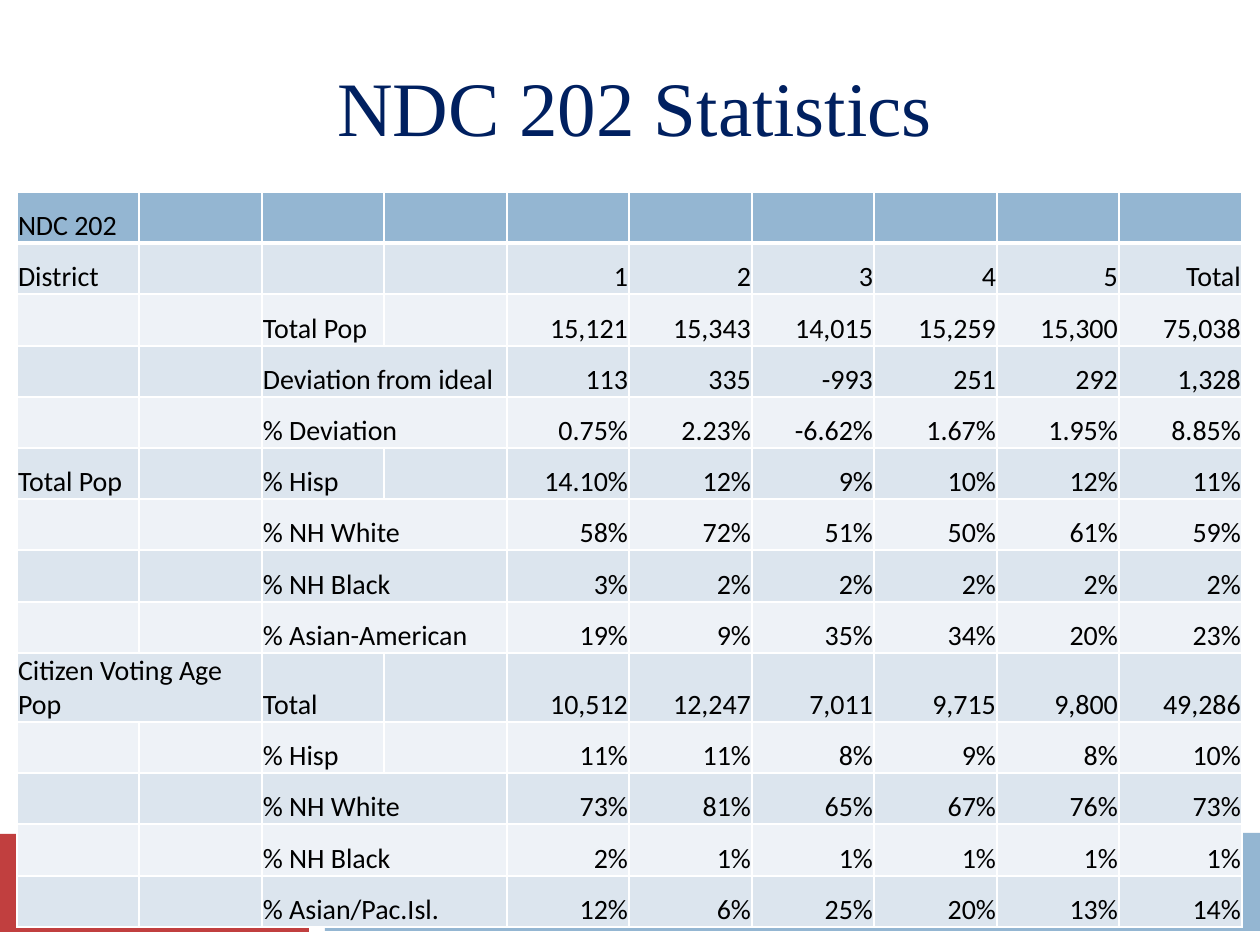
from typing import NamedTuple

from lxml import etree
from pptx import Presentation
from pptx.dml.color import RGBColor
from pptx.enum.shapes import MSO_SHAPE
from pptx.enum.text import MSO_ANCHOR, PP_ALIGN
from pptx.oxml.ns import qn
from pptx.util import Emu, Pt

RECTANGLE = MSO_SHAPE.RECTANGLE
BOTTOM = MSO_ANCHOR.BOTTOM
LEFT, RIGHT = PP_ALIGN.LEFT, PP_ALIGN.RIGHT

PX_PER_INCH = 126
COLORS = {
    "red": "C13F3F",
    "blue": "94B6D2",
    "band_dark": "DCE5EE",
    "band_light": "EEF2F7",
    "navy": "002060",
    "black": "000000",
    "white": "FFFFFF",
}
GROUP_COLUMN, MEASURE_COLUMN, FIRST_DISTRICT_COLUMN = 0, 2, 4
COLUMN_COUNT = 10


class Bar(NamedTuple):
    left: int
    top: int
    width: int
    height: int
    color: str


class StatRow(NamedTuple):
    group: str
    measure: str
    values: str = ""
    merged_column: int | None = None
    height: int = 51


BARS = [
    Bar(-1, 834, 310, 98, "red"),
    Bar(325, 833, 935, 98, "blue"),
]

STAT_ROWS = [
    StatRow("NDC 202", ""),
    StatRow("District", "", "1 2 3 4 5 Total"),
    StatRow("", "Total Pop", "15,121 15,343 14,015 15,259 15,300 75,038", height=52),
    StatRow("", "Deviation from ideal", "113 335 -993 251 292 1,328", MEASURE_COLUMN),
    StatRow("", "% Deviation", "0.75% 2.23% -6.62% 1.67% 1.95% 8.85%", MEASURE_COLUMN),
    StatRow("Total Pop", "% Hisp", "14.10% 12% 9% 10% 12% 11%"),
    StatRow("", "% NH White", "58% 72% 51% 50% 61% 59%", MEASURE_COLUMN),
    StatRow("", "% NH Black", "3% 2% 2% 2% 2% 2%", MEASURE_COLUMN, 52),
    StatRow("", "% Asian-American", "19% 9% 35% 34% 20% 23%", MEASURE_COLUMN),
    StatRow("Citizen Voting Age Pop", "Total",
            "10,512 12,247 7,011 9,715 9,800 49,286", GROUP_COLUMN, 69),
    StatRow("", "% Hisp", "11% 11% 8% 9% 8% 10%"),
    StatRow("", "% NH White", "73% 81% 65% 67% 76% 73%", MEASURE_COLUMN),
    StatRow("", "% NH Black", "2% 1% 1% 1% 1% 1%", MEASURE_COLUMN, 52),
    StatRow("", "% Asian/Pac.Isl.", "12% 6% 25% 20% 13% 14%", MEASURE_COLUMN),
]


def px(length: int) -> Emu:
    return Emu(round(length * 914400 / PX_PER_INCH))


def rgb(color: str) -> RGBColor:
    return RGBColor.from_string(COLORS[color])


def add_run(paragraph, text: str, font_name: str, size: int, color: str) -> None:
    run = paragraph.add_run()
    run.text = text
    run.font.name = font_name
    run.font.size = Pt(size)
    run.font.bold = False
    run.font.color.rgb = rgb(color)


def draw_bar(slide, bar: Bar) -> None:
    shape = slide.shapes.add_shape(
        RECTANGLE, px(bar.left), px(bar.top), px(bar.width), px(bar.height))
    shape.shadow.inherit = False
    shape.fill.solid()
    shape.fill.fore_color.rgb = rgb(bar.color)
    shape.line.fill.background()


def draw_title(slide, text: str) -> None:
    frame = slide.shapes.add_textbox(px(325), px(14), px(892), px(144)).text_frame
    frame.word_wrap = True
    frame.vertical_anchor = BOTTOM
    add_run(frame.paragraphs[0], text, "Times New Roman", 44, "navy")


def set_border(cell, side: str, points: int) -> None:
    properties = cell._tc.get_or_add_tcPr()
    line = etree.SubElement(properties, qn(f"a:ln{side}"), w=str(Pt(points)))
    fill = etree.SubElement(line, qn("a:solidFill"))
    etree.SubElement(fill, qn("a:srgbClr"), val=COLORS["white"])


def style_cell(cell, row_index: int) -> None:
    cell.margin_left = cell.margin_right = cell.margin_top = px(1)
    cell.margin_bottom = 0
    cell.vertical_anchor = BOTTOM
    # A thick rule separates the header from the body
    thickness = {"L": 1, "R": 1,
                 "T": 3 if row_index == 1 else 1,
                 "B": 3 if row_index == 0 else 1}
    for side, points in thickness.items():
        set_border(cell, side, points)
    band = "band_dark" if row_index % 2 else "band_light"
    cell.fill.solid()
    cell.fill.fore_color.rgb = rgb("blue" if row_index == 0 else band)


def draw_statistics(slide, stat_rows: list[StatRow]) -> None:
    column_widths = [122 + column % 2 for column in range(COLUMN_COUNT)]
    table = slide.shapes.add_table(
        len(stat_rows), COLUMN_COUNT, px(17), px(192), px(sum(column_widths)),
        px(sum(stat.height for stat in stat_rows))).table
    for column, width in zip(table.columns, column_widths):
        column.width = px(width)

    for row_index, stat in enumerate(stat_rows):
        table.rows[row_index].height = px(stat.height)
        labels = {GROUP_COLUMN: stat.group, MEASURE_COLUMN: stat.measure}
        labels.update(enumerate(stat.values.split(), FIRST_DISTRICT_COLUMN))
        for column_index in range(COLUMN_COUNT):
            cell = table.cell(row_index, column_index)
            style_cell(cell, row_index)
            label = labels.get(column_index)
            if label:
                paragraph = cell.text_frame.paragraphs[0]
                paragraph.alignment = (
                    RIGHT if column_index >= FIRST_DISTRICT_COLUMN else LEFT)
                add_run(paragraph, label, "Calibri", 16, "black")
        if stat.merged_column is not None:
            table.cell(row_index, stat.merged_column).merge(
                table.cell(row_index, stat.merged_column + 1))


def main() -> None:
    presentation = Presentation()
    presentation.slide_width, presentation.slide_height = px(1260), px(945)
    slide = presentation.slides.add_slide(presentation.slide_layouts[6])

    # Footer bars behind the table
    for bar in BARS:
        draw_bar(slide, bar)

    # Heading and district figures
    draw_title(slide, "NDC 202 Statistics")
    draw_statistics(slide, STAT_ROWS)

    presentation.save("out.pptx")


if __name__ == "__main__":
    main()
